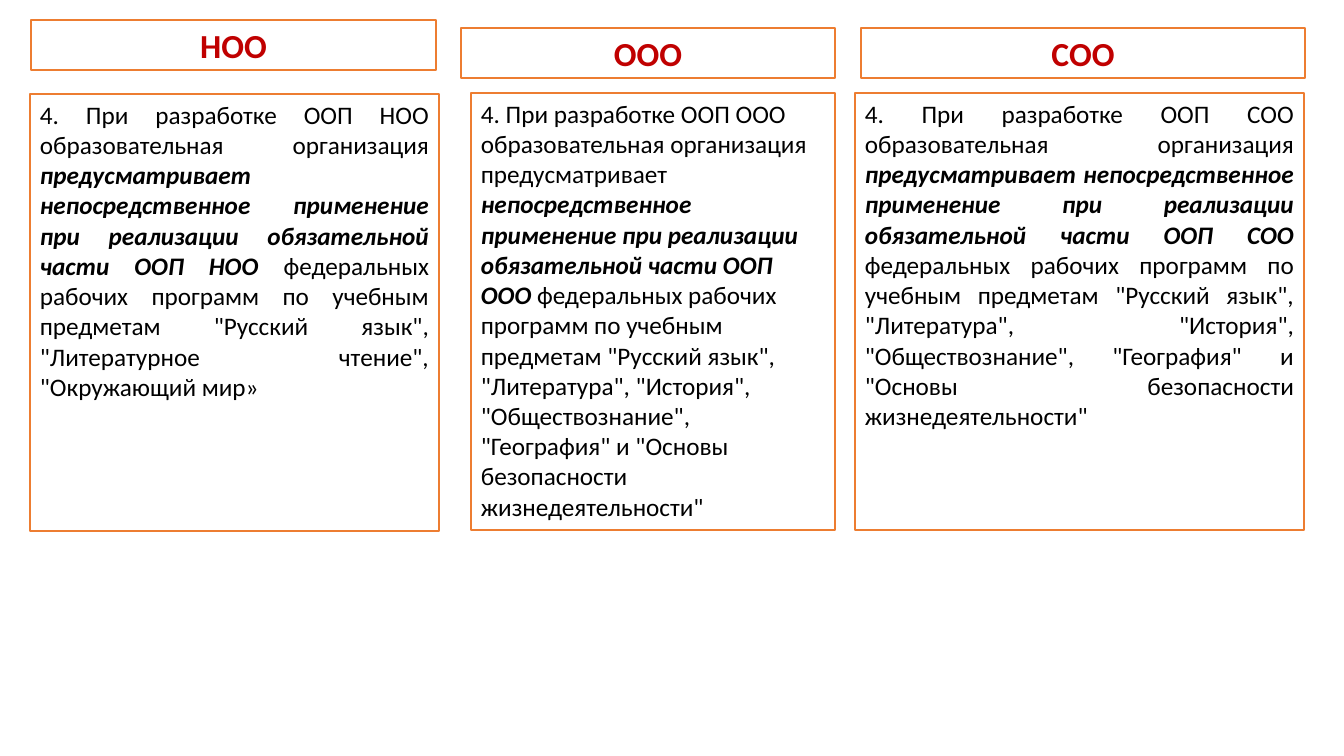
from pptx import Presentation
from pptx.dml.color import RGBColor as Rgb
from pptx.enum.shapes import MSO_SHAPE as Kind
from pptx.enum.text import MSO_ANCHOR as Anchor, MSO_AUTO_SIZE as Fit, PP_ALIGN as Align
from pptx.util import Emu, Pt

SCALE = 914400 / 100.8
HUES = {"paper": "FFFFFF", "edge": "ED7D31", "ink": "000000", "head": "C00000"}

INTRO = "4. При разработке ООП {} образовательная организация "
VERB = "предусматривает "
CORE = "непосредственное применение при реализации обязательной части ООП {} "
TAIL = "федеральных рабочих программ по учебным предметам "
BASIC = '"Русский язык", "Литературное чтение", "Окружающий мир»'
FULL = ('"Русский язык", "Литература", "История", "Обществознание", '
        '"География" и "Основы безопасности жизнедеятельности"')

LEVELS = [
    ("НОО", (31, 20, 405, 50), (30, 94, 409, 437), INTRO, VERB + CORE, BASIC, Align.JUSTIFY),
    ("ООО", (461, 28, 374, 50), (471, 93, 364, 437), INTRO + VERB, CORE, FULL, Align.LEFT),
    ("СОО", (861, 28, 444, 50), (855, 93, 449, 437), INTRO, VERB + CORE, FULL, Align.JUSTIFY),
]


class Board:
    face = "Calibri"

    def __init__(self, deck):
        self.slide = deck.slides.add_slide(deck.slide_layouts[6])

    def hue(self, name):
        return Rgb.from_string(HUES[name])

    def box(self, area, align, size, hue):
        place = [Emu(round(n * SCALE)) for n in area]
        shape = self.slide.shapes.add_shape(Kind.RECTANGLE, *place)
        shape.shadow.inherit = False
        shape.fill.solid()
        shape.fill.fore_color.rgb = self.hue("paper")
        shape.line.color.rgb = self.hue("edge")
        shape.line.width = Pt(1)
        frame = shape.text_frame
        frame.word_wrap = True
        frame.auto_size = Fit.SHAPE_TO_FIT_TEXT
        frame.vertical_anchor = Anchor.TOP
        para = frame.paragraphs[0]
        para.alignment = align
        para.font.name = self.face
        para.font.size = Pt(size)
        para.font.color.rgb = self.hue(hue)
        return para

    def title(self, area, text):
        para = self.box(area, Align.CENTER, 24, "head")
        para.font.bold = True
        para.add_run().text = text

    def body(self, area, align, start, stress, end):
        para = self.box(area, align, 18, "ink")
        para.add_run().text = start
        run = para.add_run()
        run.text = stress
        run.font.bold = run.font.italic = True
        para.add_run().text = end


def main():
    deck = Presentation()
    deck.slide_width = Emu(round(1344 * SCALE))
    deck.slide_height = Emu(round(756 * SCALE))
    board = Board(deck)
    for name, top, area, start, stress, themes, align in LEVELS:
        board.body(area, align, start.format(name), stress.format(name), TAIL + themes)
        board.title(top, name)
    deck.save("out.pptx")


if __name__ == "__main__":
    main()
